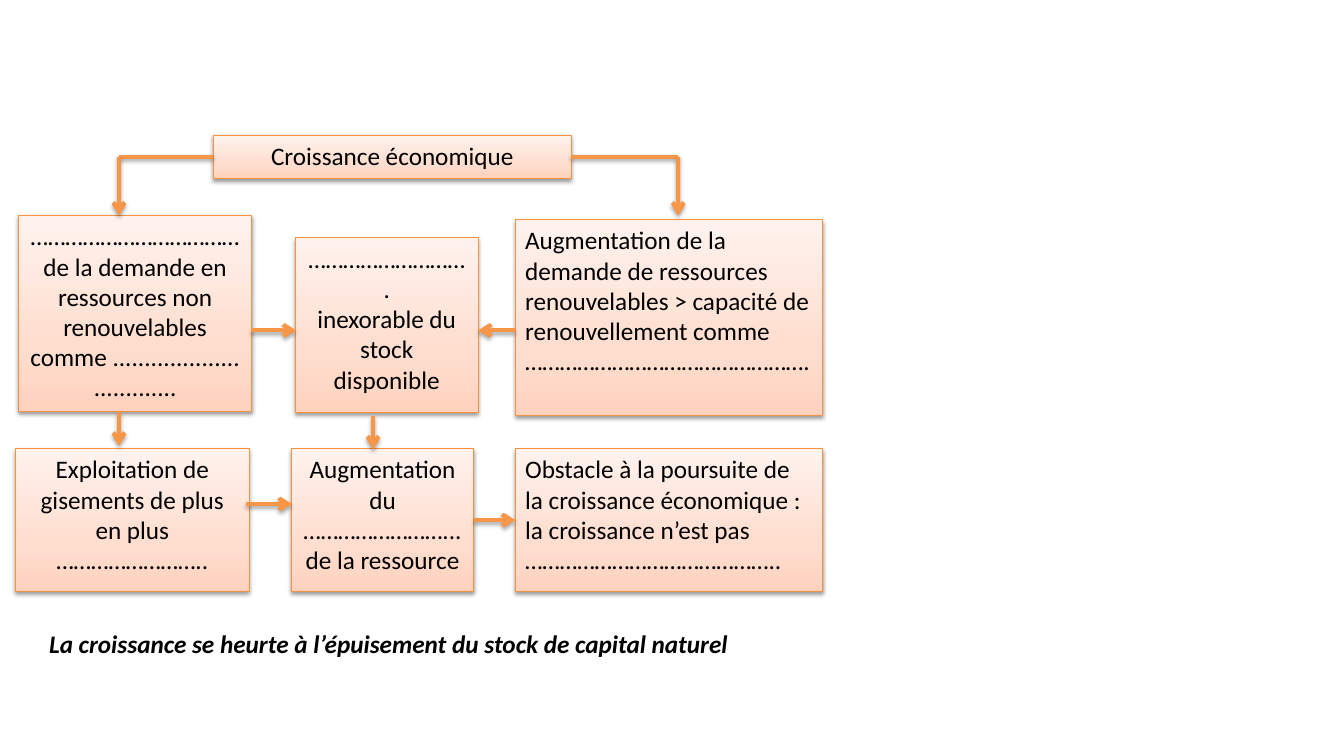
from copy import deepcopy
from dataclasses import dataclass
from typing import Optional

import lxml.etree
import pptx
import pptx.dml.color
import pptx.enum.shapes
import pptx.enum.text
import pptx.oxml.ns
import pptx.util

Pt = pptx.util.Pt
qn = pptx.oxml.ns.qn
ALIGN = pptx.enum.text.PP_ALIGN

COLORS = {
    "text": "000000", "edge": "F69240", "arrow": "F79646", "shade": "000000",
    "low": "FFD2BD", "mid": "FFDED0", "high": "FFF2ED",
}
STOPS = [("low", 0), ("mid", 0.35), ("high", 1)]
FONT, SIZE = "Calibri", 18
LEFT, RIGHT = 1, 3  # connection sites


@dataclass
class Box:
    name: str
    x: float
    y: float
    w: float
    h: float
    lines: list[str]
    align: ALIGN = ALIGN.CENTER


@dataclass
class Link:
    x1: float
    y1: float
    x2: float
    y2: float
    head: bool = True
    start: Optional[tuple[str, int]] = None
    end: Optional[tuple[str, int]] = None


ROW = 320.5
BOXES = [
    Box("growth", 152.5, 96.5, 255.5, 31, ["Croissance économique"]),
    Box("demand", 13, 154, 167, 140, [
        "……………………………… de la demande en ressources non renouvelables "
        "comme ................................."]),
    Box("mining", 11, ROW, 167, 102, [
        "Exploitation de gisements de plus en plus", "…………………….."]),
    Box("stock", 211, 170, 130.5, 124.5, [
        "……………………….", "inexorable du stock disponible"]),
    Box("cost", 208, ROW, 130.5, 102, [
        "Augmentation du", "……………………...", "de la ressource"]),
    Box("limit", 368, ROW, 219.5, 102, [
        "Obstacle à la poursuite de la croissance économique : la croissance "
        "n’est pas …………………………………….."], ALIGN.LEFT),
    Box("renewal", 368, 157, 219.5, 139.5, [
        "Augmentation de la demande de ressources renouvelables > capacité de "
        "renouvellement comme", "…………………………………………."], ALIGN.LEFT),
]
LINKS = [
    Link(152.5, 112, 85, 112, False, start=("growth", LEFT)),
    Link(408, 112, 484.5, 112, False, start=("growth", RIGHT)),
    Link(85, 112, 85, 154),
    Link(484.5, 112, 484.5, 154),
    Link(179.5, 236, 211.5, 236),
    Link(368, 236, 341.5, 236),
    Link(85, 294.5, 85, 318.5),
    Link(176, 360, 208.5, 360),
    Link(266.5, 297.5, 266.5, 321),
    Link(338.5, 371.5, 368, 371.5,
         start=("cost", RIGHT), end=("limit", LEFT)),
]


def color(name: str) -> pptx.dml.color.RGBColor:
    return pptx.dml.color.RGBColor.from_string(COLORS[name])


def add_shade(props, dist: float, alpha: int) -> None:
    """Give the shape properties a soft shadow that falls straight down."""
    sub = lxml.etree.SubElement
    effects = props.find(qn("a:effectLst"))
    if effects is None:
        effects = sub(props, qn("a:effectLst"))
    outer = sub(effects, qn("a:outerShdw"), blurRad=str(Pt(3.1)),
                dist=str(Pt(dist)), dir="5400000", rotWithShape="0")
    tint = sub(outer, qn("a:srgbClr"), val=COLORS["shade"])
    sub(tint, qn("a:alpha"), val=str(alpha * 1000))


def fill_fade(shape) -> None:
    """Fill with three stops that grow lighter towards the top."""
    fill = shape.fill
    fill.gradient()
    fill.gradient_angle = 90
    stops = shape._element.spPr.find(qn("a:gradFill")).find(qn("a:gsLst"))
    stops.append(deepcopy(stops[0]))
    for stop, (name, place) in zip(fill.gradient_stops, STOPS):
        stop.color.rgb = color(name)
        stop.position = place


def write(frame, lines: list[str], align: ALIGN, strong: bool = False) -> None:
    frame.word_wrap = True
    frame.vertical_anchor = pptx.enum.text.MSO_ANCHOR.TOP
    for i, line in enumerate(lines):
        para = frame.add_paragraph() if i else frame.paragraphs[0]
        para.text = line
        para.alignment = align
        font = para.font
        font.name, font.size = FONT, Pt(SIZE)
        font.color.rgb = color("text")
        if strong:
            font.bold = font.italic = True


def add_box(slide, box: Box):
    shape = slide.shapes.add_shape(
        pptx.enum.shapes.MSO_SHAPE.RECTANGLE,
        Pt(box.x), Pt(box.y), Pt(box.w), Pt(box.h))
    fill_fade(shape)
    shape.line.color.rgb = color("edge")
    shape.line.width = Pt(0.75)
    shape.shadow.inherit = False
    add_shade(shape._element.spPr, 1.6, 38)
    write(shape.text_frame, box.lines, box.align)
    return shape


def add_link(slide, link: Link, shapes: dict) -> None:
    line = slide.shapes.add_connector(
        pptx.enum.shapes.MSO_CONNECTOR.STRAIGHT,
        Pt(link.x1), Pt(link.y1), Pt(link.x2), Pt(link.y2))
    if link.start:
        line.begin_connect(shapes[link.start[0]], link.start[1])
    if link.end:
        line.end_connect(shapes[link.end[0]], link.end[1])
    line.line.color.rgb = color("arrow")
    line.line.width = Pt(3)
    props = line._element.spPr
    if link.head:
        lxml.etree.SubElement(
            props.find(qn("a:ln")), qn("a:tailEnd"), type="arrow")
    add_shade(props, 1.8, 35)


def add_note(slide) -> None:
    note = slide.shapes.add_textbox(Pt(28), Pt(445.5), Pt(572.5), Pt(29))
    write(note.text_frame, [
        "La croissance se heurte à l’épuisement du stock de capital naturel"],
        ALIGN.LEFT, strong=True)
    note.text_frame.auto_size = pptx.enum.text.MSO_AUTO_SIZE.SHAPE_TO_FIT_TEXT


def main() -> None:
    deck = pptx.Presentation()
    deck.slide_width, deck.slide_height = Pt(960), Pt(540)
    slide = deck.slides.add_slide(deck.slide_layouts[6])
    shapes = {box.name: add_box(slide, box) for box in BOXES}
    for link in LINKS:
        add_link(slide, link, shapes)
    add_note(slide)
    deck.save("out.pptx")


if __name__ == "__main__":
    main()
